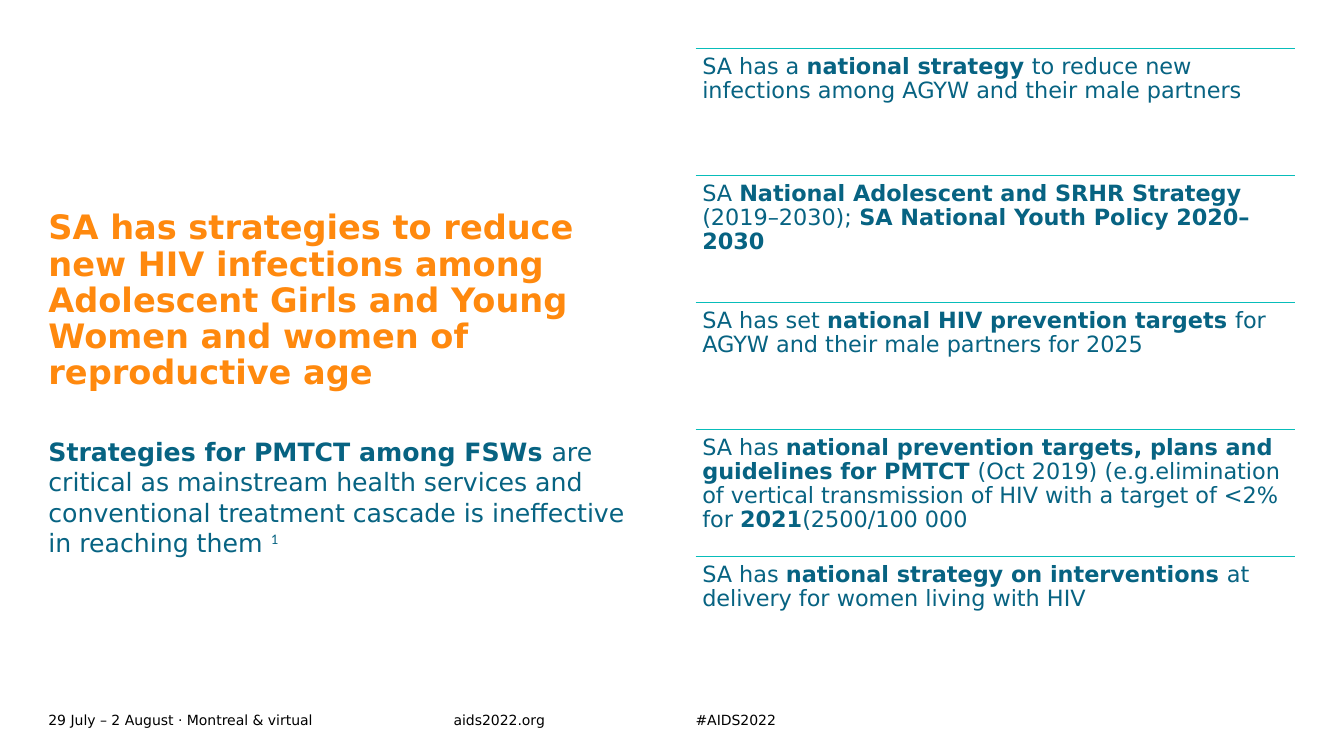
import pptx
import pptx.dml.color
import pptx.enum.shapes
import pptx.enum.text
import pptx.oxml.xmlchemy
import pptx.util

Cm, Pt = pptx.util.Cm, pptx.util.Pt
RGBColor = pptx.dml.color.RGBColor
ANCHOR = pptx.enum.text.MSO_ANCHOR

ORANGE = RGBColor(0xFF, 0x89, 0x0E)
BLUE = RGBColor(0x07, 0x63, 0x82)
TEAL = RGBColor(0x08, 0xBD, 0xBA)
BLACK = RGBColor(0, 0, 0)

FONT = "DejaVu Sans"
TITLE = {"name": FONT, "size": Pt(24), "color": ORANGE}
BODY = {"name": FONT, "size": Pt(18), "color": BLUE}
ITEM = {"name": FONT, "size": Pt(16), "color": BLUE}
FOOTER = {"name": FONT, "size": Pt(10), "color": BLACK}

LEFT, RIGHT, COLUMN = 1.22, 17.53, 15.11

# Each text is a list of (words, bold) runs
HEADLINE = [("SA has strategies to reduce new HIV infections among Adolescent Girls "
             "and Young Women and women of reproductive age", True)]
SUMMARY = [("Strategies for PMTCT among FSWs ", True),
           ("are critical as mainstream health services and conventional treatment "
            "cascade is ineffective in reaching them ", False)]
STRATEGIES = [
    [("SA has a ", False), ("national strategy ", True),
     ("to reduce new infections among AGYW and their male partners", False)],
    [("SA ", False), ("National Adolescent and SRHR Strategy ", True),
     ("(2019–2030); ", False), ("SA National Youth Policy 2020–2030", True)],
    [("SA has set ", False), ("national HIV prevention targets ", True),
     ("for AGYW and their male partners for 2025", False)],
    [("SA has ", False),
     ("national prevention targets, plans and guidelines for PMTCT ", True),
     ("(Oct 2019) (e.g.elimination of vertical transmission of HIV with a "
      "target of <2% for ", False),
     ("2021", True), ("(2500/100 000", False)],
    [("SA has ", False), ("national strategy on interventions ", True),
     ("at delivery for women living with HIV", False)],
]
FOOTERS = [(LEFT, 10.21, "29 July – 2 August · Montreal & virtual"),
           (11.43, 4.9, "aids2022.org"),
           (RIGHT, 4.9, "#AIDS2022")]


def add_run(p, text, bold, style):
    r = p.add_run()
    r.text = text
    r.font.bold = bold
    for key, value in style.items():
        if key == "color":
            r.font.color.rgb = value
        else:
            setattr(r.font, key, value)
    return r


def fill_text(sp, runs, style, anchor=ANCHOR.TOP, inset=0, spacing=None):
    tf = sp.text_frame
    frame = {"word_wrap": True, "auto_size": pptx.enum.text.MSO_AUTO_SIZE.NONE,
             "vertical_anchor": anchor}
    frame.update({f"margin_{side}": Cm(inset)
                  for side in ("left", "top", "right", "bottom")})
    for key, value in frame.items():
        setattr(tf, key, value)
    p = tf.paragraphs[0]
    p.alignment = pptx.enum.text.PP_ALIGN.LEFT
    p.line_spacing = spacing
    for text, bold in runs:
        add_run(p, text, bold, style)
    return p


def add_text(s, box, runs, style, **layout):
    sp = s.shapes.add_textbox(*map(Cm, box))
    return fill_text(sp, runs, style, **layout)


def add_rule(s, x, y, width):
    line = s.shapes.add_connector(pptx.enum.shapes.MSO_CONNECTOR.STRAIGHT,
                                  Cm(x), Cm(y), Cm(x + width), Cm(y))
    line.line.color.rgb = TEAL
    line.line.width = Pt(0.5)
    line._element.spPr.append(pptx.oxml.xmlchemy.OxmlElement("a:effectLst"))


def build_message(s, x, y, width):
    # Headline in the title placeholder
    sp = s.shapes.title
    box = (x, y, width, 5.26)
    for name, value in zip(("left", "top", "width", "height"), box):
        setattr(sp, name, Cm(value))
    fill_text(sp, HEADLINE, TITLE, anchor=ANCHOR.BOTTOM, spacing=0.9)

    # Summary with its reference mark
    p = add_text(s, (x, y + 6.38, width, 6.22), SUMMARY, BODY)
    mark = add_run(p, "1", False, {**BODY, "name": "Calibri"})
    mark._r.get_or_add_rPr().set("baseline", "30000")


def build_strategies(s, x, y, width, height):
    # One ruled row for each strategy
    step = height / len(STRATEGIES)
    for i, runs in enumerate(STRATEGIES):
        top = y + i * step
        add_rule(s, x, top, width)
        add_text(s, (x, top, width, step), runs, ITEM, inset=0.17, spacing=0.9)


def build_footer(s, y, height):
    # Date, site and hashtag
    for x, width, text in FOOTERS:
        add_text(s, (x, y, width, height), [(text, False)], FOOTER,
                 anchor=ANCHOR.MIDDLE)


def main():
    prs = pptx.Presentation()
    prs.slide_width, prs.slide_height = Cm(33.87), Cm(19.05)
    s = prs.slides.add_slide(prs.slide_layouts.get_by_name("Title Only"))
    build_footer(s, 17.83, 0.61)
    build_message(s, LEFT, 4.62, COLUMN)
    build_strategies(s, RIGHT, 1.22, COLUMN, 16)
    prs.save("out.pptx")


if __name__ == "__main__":
    main()
